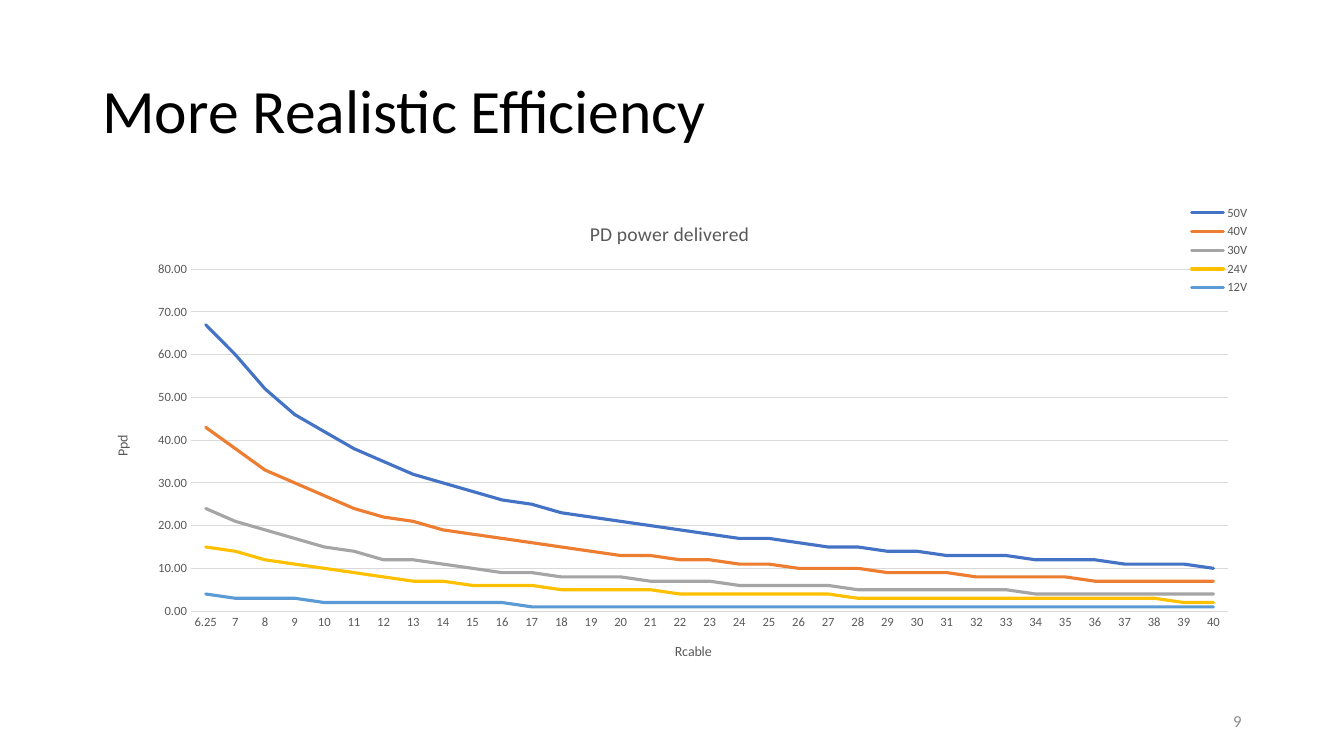
from lxml import etree
from pptx import Presentation
from pptx import util as u
from pptx.chart import data as chart_data
from pptx.dml import color
from pptx.enum import chart as chart_enum, text
from pptx.oxml import ns


def rgb(value):
    return color.RGBColor.from_string(value)


def add_text(holder, wording, size, hue, bold=None):
    paragraph = holder.paragraphs[0]
    run = paragraph.add_run()
    run.text = wording
    run.font.name = "Calibri"
    run.font.size = u.Pt(size)
    run.font.bold = bold
    run.font.color.rgb = rgb(hue)
    return paragraph


presentation = Presentation()
presentation.slide_width = u.Pt(960)
presentation.slide_height = u.Pt(540)
slide = presentation.slides.add_slide(presentation.slide_layouts[6])

labels = [
    ("More Realistic Efficiency", (66, 28.75, 828, 104.4), 44, "000000", text.PP_ALIGN.LEFT, 0.9),
    ("9", (678, 500.5, 216, 28.75), 12, "8C8C8C", text.PP_ALIGN.RIGHT, 1),
]
for wording, place, size, hue, alignment, spacing in labels:
    box = slide.shapes.add_textbox(*[u.Pt(length) for length in place])
    box.text_frame.word_wrap = True
    box.text_frame.vertical_anchor = text.MSO_ANCHOR.MIDDLE
    paragraph = add_text(box.text_frame, wording, size, hue)
    paragraph.alignment = alignment
    paragraph.line_spacing = spacing

cable_resistances = [6.25, *range(7, 41)]
series_colors = {50: "4472C4", 40: "ED7D31", 30: "A5A5A5", 24: "FFC000", 12: "5B9BD5"}
power_data = chart_data.CategoryChartData(number_format="0.00")
power_data.categories = cable_resistances
for voltage in series_colors:
    delivered = [round(voltage ** 2 / (6 * resistance)) for resistance in cable_resistances]
    power_data.add_series(f"{voltage}V", delivered)

chart = slide.shapes.add_chart(
    chart_enum.XL_CHART_TYPE.LINE, u.Pt(66), u.Pt(144), u.Pt(828), u.Pt(342.6), power_data
).chart
chart.font.name = "Calibri"
chart.font.size = u.Pt(10)
chart.font.color.rgb = rgb("595959")
chart.has_title = True
add_text(chart.chart_title.text_frame, "PD power delivered ", 14, "595959", False)

for series, hue in zip(chart.plots[0].series, series_colors.values()):
    series.smooth = False
    series.format.line.color.rgb = rgb(hue)
    series.format.line.width = u.Pt(2.25)
    series._element.find(".//" + ns.qn("a:ln")).set("cap", "rnd")

for axis, name in ((chart.category_axis, "Rcable"), (chart.value_axis, "Ppd")):
    axis.major_tick_mark = chart_enum.XL_TICK_MARK.NONE
    axis.minor_tick_mark = chart_enum.XL_TICK_MARK.NONE
    axis.tick_labels.font.size = u.Pt(9)
    axis.tick_labels.font.color.rgb = rgb("595959")
    add_text(axis.axis_title.text_frame, name, 10, "595959", False)

value_axis = chart.value_axis
value_axis.minimum_scale = 0
value_axis.maximum_scale = 80
value_axis.major_unit = 10
value_axis.tick_labels.number_format = "0.00"
value_axis.tick_labels.number_format_is_linked = False
value_axis.format.line.fill.background()
value_axis.has_major_gridlines = True
for line in (chart.category_axis.format.line, value_axis.major_gridlines.format.line):
    line.color.rgb = rgb("D9D9D9")
    line.width = u.Pt(0.75)

chart.has_legend = True
chart.legend.position = chart_enum.XL_LEGEND_POSITION.CORNER
chart.legend.include_in_layout = True
chart.legend.font.size = u.Pt(9)
chart.legend.font.color.rgb = rgb("595959")

plot_area = chart.plots[0]._element.getparent()
for old_layout in plot_area.findall(ns.qn("c:layout")):
    plot_area.remove(old_layout)
layout = etree.Element(ns.qn("c:layout"))
manual = etree.SubElement(layout, ns.qn("c:manualLayout"))
settings = {
    "layoutTarget": "inner", "xMode": "edge", "yMode": "edge",
    "x": "0.085", "y": "0.141", "w": "0.895", "h": "0.713",
}
for setting, value in settings.items():
    etree.SubElement(manual, ns.qn(f"c:{setting}"), val=value)
plot_area.insert(0, layout)

presentation.save("out.pptx")
